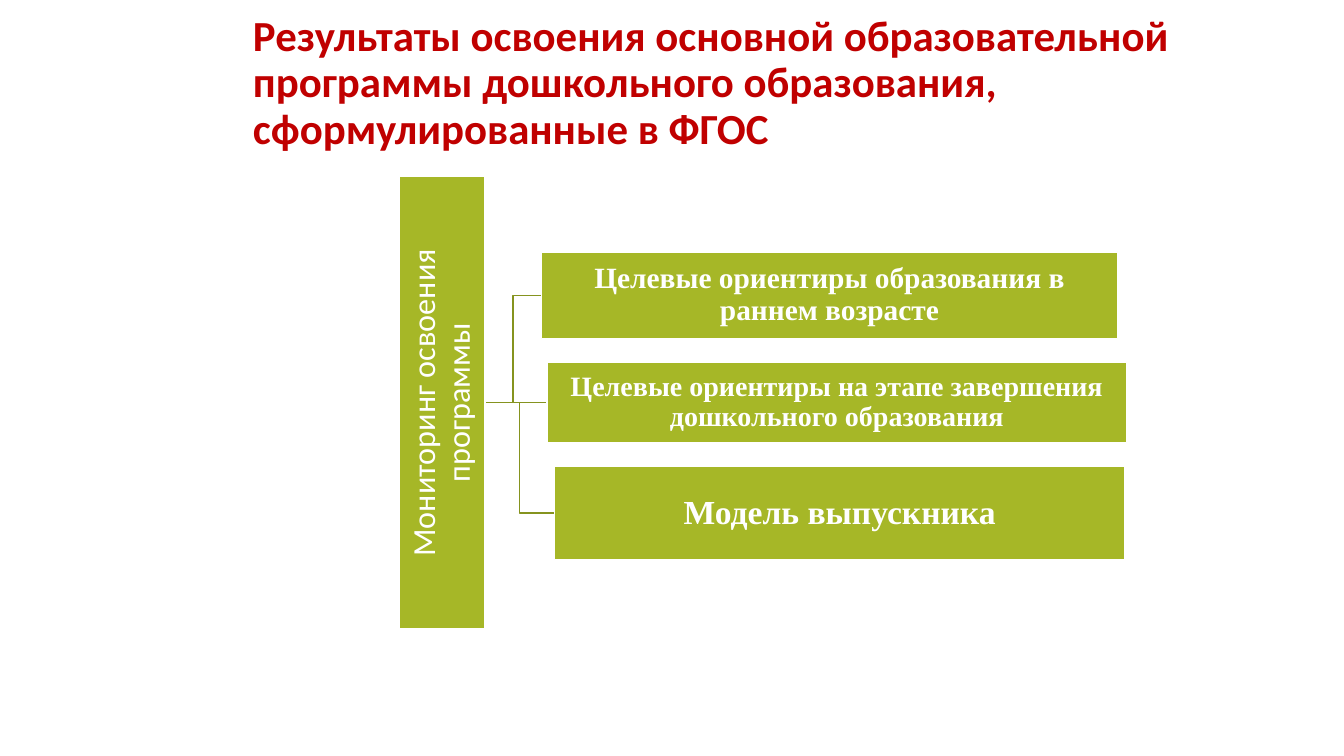
from typing import NamedTuple

from pptx import Presentation
from pptx.dml.color import RGBColor as Rgb
from pptx.enum.shapes import MSO_SHAPE as Kind
from pptx.enum.text import MSO_ANCHOR as Anchor, MSO_AUTO_SIZE as Fit, PP_ALIGN as Align
from pptx.util import Cm, Pt

HUES = {"title": "C00000", "box": "A6B727", "link": "85931F", "white": "FFFFFF"}


class Box(NamedTuple):
    text: str
    left: float
    top: float
    width: float
    height: float
    size: float
    font: str = "Times New Roman"
    bold: bool = True
    turn: float = 0


ROOT = Box("Мониторинг освоения программы", 5.44, 9.07, 11.4, 2.16, 23, "Calibri", False, 270)
GOALS = [
    Box("Целевые ориентиры образования в раннем возрасте", 13.64, 6.35, 14.53, 2.18, 21),
    Box("Целевые ориентиры на этапе завершения дошкольного образования",
        13.79, 9.12, 14.6, 2.03, 20),
    Box("Модель выпускника", 13.97, 11.76, 14.38, 2.34, 24),
]


def hue(name: str) -> Rgb:
    return Rgb.from_string(HUES[name])


def write(frame, text: str, size: float, font: str, bold: bool, tint: str, align) -> None:
    frame.word_wrap = True
    frame.auto_size = Fit.NONE
    para = frame.paragraphs[0]
    para.text = text
    para.alignment = align
    para.line_spacing = 0.9
    para.font.size = Pt(size)
    para.font.name = font
    para.font.bold = bold
    para.font.color.rgb = hue(tint)


def draw_box(slide, box: Box) -> None:
    shape = slide.shapes.add_shape(
        Kind.RECTANGLE, Cm(box.left), Cm(box.top), Cm(box.width), Cm(box.height))
    shape.rotation = box.turn
    shape.shadow.inherit = False
    shape.fill.solid()
    shape.fill.fore_color.rgb = hue("box")
    shape.line.color.rgb = hue("white")
    shape.line.width = Pt(1)
    frame = shape.text_frame
    frame.margin_left = frame.margin_right = Cm(0.04)
    frame.margin_top = frame.margin_bottom = Cm(0.04)
    frame.vertical_anchor = Anchor.MIDDLE
    write(frame, box.text, box.size, box.font, box.bold, "white", Align.CENTER)


def draw_link(slide, root: Box, goal: Box) -> None:
    # The root is turned upright, so its height is its visible width
    start = Cm(root.left + (root.width + root.height) / 2)
    level = Cm(root.top + root.height / 2)
    end, row = Cm(goal.left), Cm(goal.top + goal.height / 2)
    bend = (start + end) // 2
    pen = slide.shapes.build_freeform(start, level)
    pen.add_line_segments([(bend, level), (bend, row), (end, row)], close=False)
    link = pen.convert_to_shape()
    link.shadow.inherit = False
    link.fill.background()
    link.line.color.rgb = hue("link")
    link.line.width = Pt(1)


def main() -> None:
    deck = Presentation()
    deck.slide_width, deck.slide_height = Cm(33.87), Cm(19.05)
    slide = deck.slides.add_slide(deck.slide_layouts[5])

    # Title
    title = slide.shapes.title
    title.left, title.top, title.width, title.height = Cm(6.12), Cm(0.84), Cm(26.04), Cm(3.15)
    title.text_frame.vertical_anchor = Anchor.BOTTOM
    write(title.text_frame,
          "Результаты освоения основной образовательной программы "
          "дошкольного образования, сформулированные в ФГОС",
          30.6, "Calibri", True, "title", Align.LEFT)

    # Links from the root to each goal, behind the boxes
    for goal in reversed(GOALS):
        draw_link(slide, ROOT, goal)

    # Root and goals
    for box in [ROOT, *GOALS]:
        draw_box(slide, box)

    deck.save("out.pptx")


if __name__ == "__main__":
    main()
